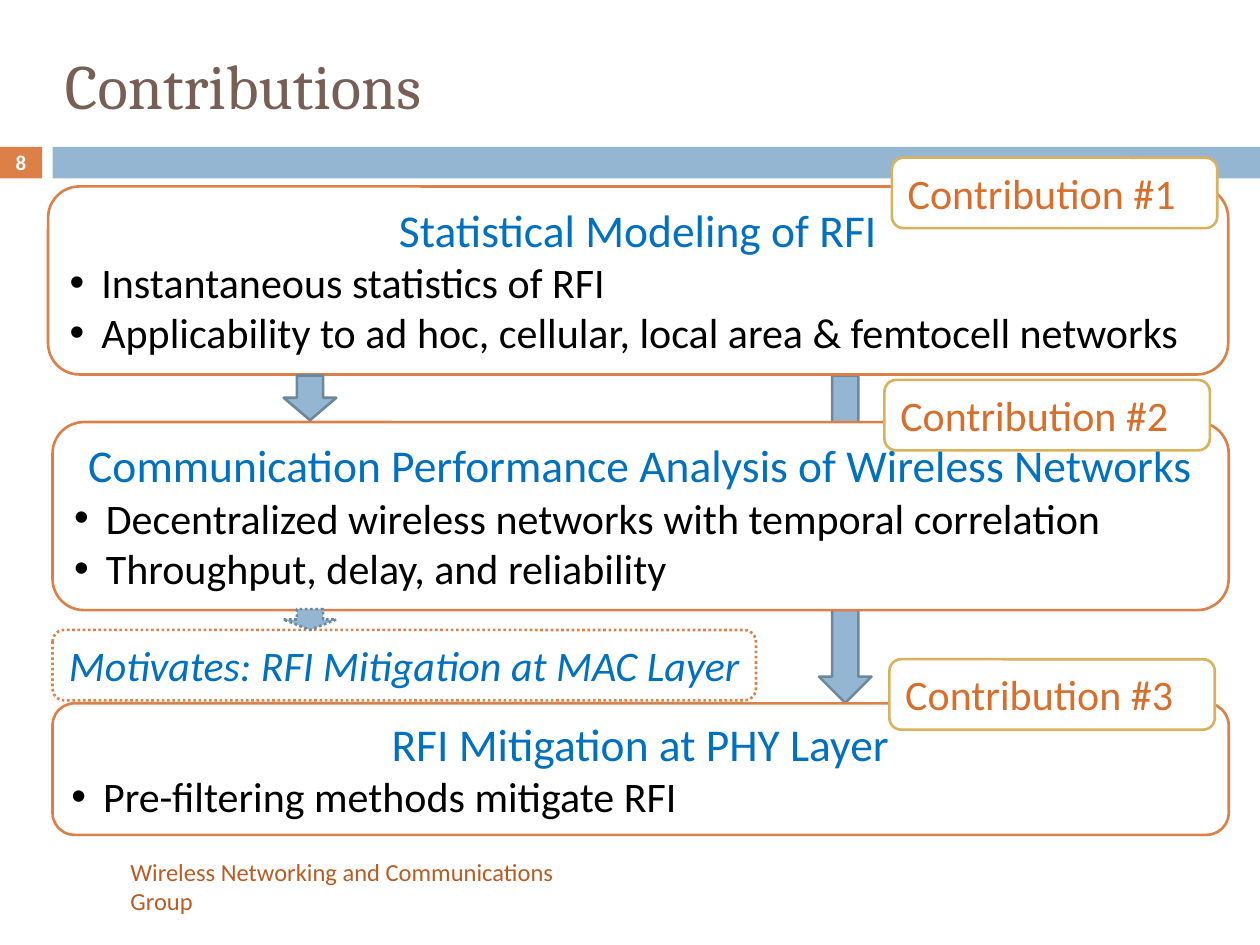
from lxml import etree
from pptx import Presentation
from pptx.dml.color import RGBColor
from pptx.enum import dml, shapes, text
from pptx.oxml.ns import qn
from pptx.util import Cm, Pt

BLUE, ORANGE, GOLD, WHITE = "94B6D2", "DD8047", "D8B25C", "FFFFFF"
HEADING, ARROW_EDGE = "0070C0", "6D879B"
ROUNDED = shapes.MSO_SHAPE.ROUNDED_RECTANGLE
BAR = shapes.MSO_SHAPE.RECTANGLE
ARROW = shapes.MSO_SHAPE.DOWN_ARROW
CENTER, LEFT, JUSTIFY = text.PP_ALIGN.CENTER, text.PP_ALIGN.LEFT, text.PP_ALIGN.JUSTIFY
TOP, MIDDLE = text.MSO_ANCHOR.TOP, text.MSO_ANCHOR.MIDDLE
color = RGBColor.from_string

deck = Presentation()
deck.slide_width, deck.slide_height = Cm(25.4), Cm(19.05)
slide = deck.slides.add_slide(deck.slide_layouts[6])


def draw(kind, box, fill=None, edge=None, dotted=False):
    part = slide.shapes.add_shape(kind, *map(Cm, box))
    part.shadow.inherit = False
    if fill:
        part.fill.solid()
        part.fill.fore_color.rgb = color(fill)
    else:
        part.fill.background()
    if edge:
        part.line.color.rgb = color(edge)
        part.line.width = Pt(1.5)
        if dotted:
            part.line.dash_style = dml.MSO_LINE.ROUND_DOT
    else:
        part.line.fill.background()
    return part


def write(part, words, size, ink, align=LEFT, anchor=TOP, font="Calibri",
          bold=False, italic=False, bullet=False):
    frame = part.text_frame
    frame.word_wrap = True
    frame.vertical_anchor = anchor
    paragraph = frame.paragraphs[0]
    if paragraph.runs:
        paragraph = frame.add_paragraph()
    paragraph.alignment = align
    if bullet:
        props = paragraph._p.get_or_add_pPr()
        props.set("marL", str(Cm(0.64)))
        props.set("indent", str(-Cm(0.64)))
        etree.SubElement(props, qn("a:buFont"), typeface="Arial")
        etree.SubElement(props, qn("a:buChar"), char="•")
    run = paragraph.add_run()
    run.text = words
    run.font.name, run.font.size = font, Pt(size)
    run.font.bold, run.font.italic = bold, italic
    run.font.color.rgb = color(ink)


# Header band and the long arrow behind the panels
draw(BAR, (0, 2.96, 0.85, 0.64), ORANGE)
draw(BAR, (1.06, 2.96, 24.34, 0.64), BLUE)
draw(ARROW, (16.51, 7.57, 1.06, 6.6), BLUE, ARROW_EDGE)

# Motivation note and footer
motivation = draw(ROUNDED, (1.06, 12.7, 14.18, 1.42), WHITE, ORANGE, dotted=True)
write(motivation, "Motivates: RFI Mitigation at MAC Layer", 24, HEADING, CENTER, italic=True)
footer = draw(ROUNDED, (2.33, 17.36, 10.37, 1.02))
write(footer, "Wireless Networking and Communications Group", 14, "B95B22", anchor=MIDDLE)

# Title and slide number
title = slide.shapes.add_textbox(Cm(1.06), Cm(0.64), Cm(23.71), Cm(2.12))
write(title, "Contributions", 36, "775F55", anchor=MIDDLE, font="Cambria")
number = slide.shapes.add_textbox(Cm(0), Cm(2.92), Cm(0.85), Cm(0.69))
number.text_frame.margin_left = number.text_frame.margin_right = 0
number.text_frame.margin_top = number.text_frame.margin_bottom = 0
write(number, "8", 12, WHITE, CENTER, MIDDLE, bold=True)

# Topic panels
topics = [
    ((0.97, 3.76, 23.79, 3.79), "Statistical Modeling of RFI",
     ["Instantaneous statistics of RFI",
      "Applicability to ad hoc, cellular, local area & femtocell networks"]),
    ((1.06, 8.51, 23.71, 3.79), "Communication Performance Analysis of Wireless Networks",
     ["Decentralized wireless networks with temporal correlation",
      "Throughput, delay, and reliability"]),
    ((1.06, 14.18, 23.71, 2.65), "RFI Mitigation at PHY Layer",
     ["Pre-filtering methods mitigate RFI"]),
]
for box, heading, points in topics:
    panel = draw(ROUNDED, box, WHITE, ORANGE)
    write(panel, heading, 26, HEADING, CENTER)
    for point in points:
        write(panel, point, 24, "000000", JUSTIFY, bullet=True)

# Short arrows between the panels
draw(ARROW, (5.72, 7.57, 1.06, 0.9), BLUE, ARROW_EDGE)
draw(ARROW, (5.72, 12.28, 1.06, 0.42), BLUE, ARROW_EDGE, dotted=True)

# Contribution tags
for count, (left, top) in enumerate([(17.98, 3.18), (17.83, 7.66), (17.93, 13.29)], 1):
    tag = draw(ROUNDED, (left, top, 6.56, 1.42), WHITE, GOLD)
    write(tag, f"Contribution #{count}", 24, "D86E2C")

deck.save("out.pptx")
